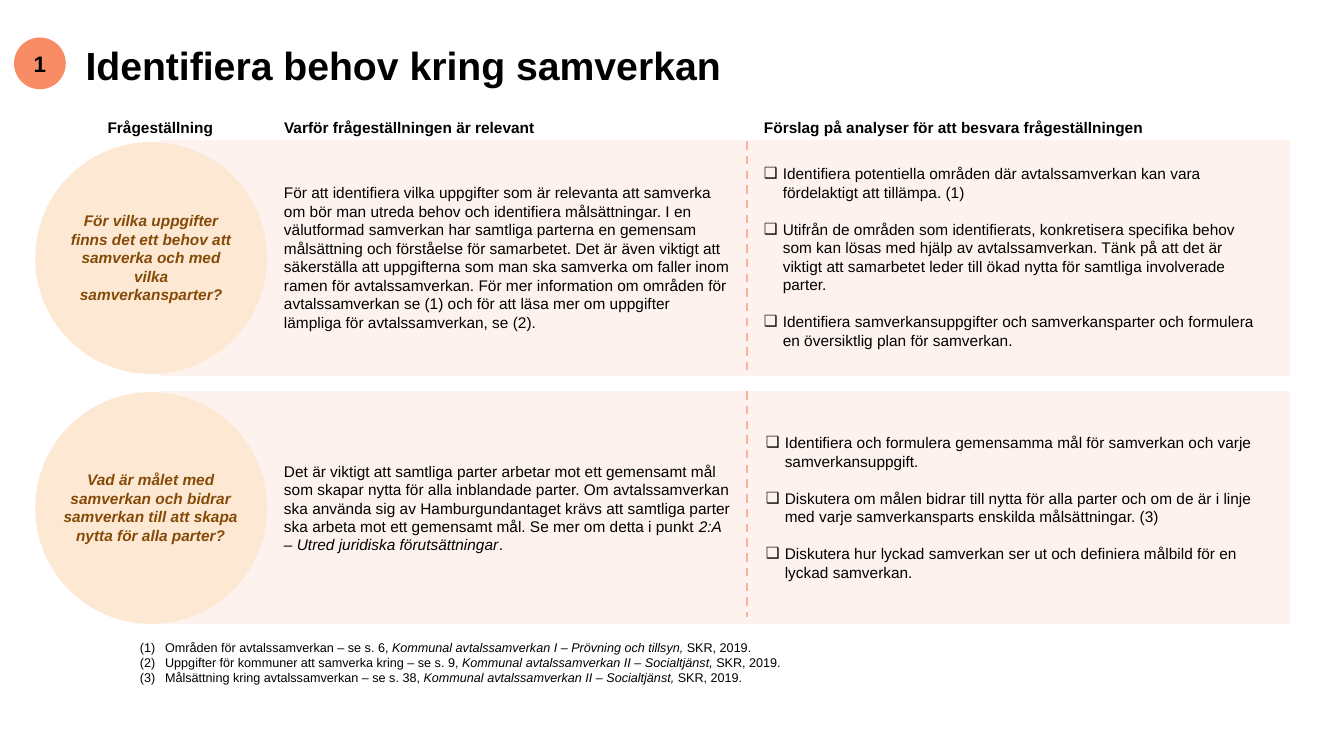
from lxml import etree
from pptx import Presentation
from pptx.dml.color import RGBColor
from pptx.enum.dml import MSO_LINE
from pptx.enum.shapes import MSO_CONNECTOR, MSO_SHAPE
from pptx.enum.text import MSO_ANCHOR, PP_ALIGN
from pptx.oxml.ns import qn
from pptx.util import Pt

LEFT, CENTER = PP_ALIGN.LEFT, PP_ALIGN.CENTER
TOP, MIDDLE = MSO_ANCHOR.TOP, MSO_ANCHOR.MIDDLE
OVAL, RECT = MSO_SHAPE.OVAL, MSO_SHAPE.RECTANGLE
STRAIGHT, DASH = MSO_CONNECTOR.STRAIGHT, MSO_LINE.DASH

CHECKBOX = ("a:buChar", {"char": "❑"})
NUMBERED = ("a:buAutoNum", {"type": "arabicParenBoth"})


def color(value):
    return RGBColor.from_string(value)


class SlideBuilder:
    """Holds the style and the current slide."""

    font_name = "Arial"
    ink, question_ink = "000000", "854A07"
    badge, band, circle, divider = "F88C64", "FDD9CB", "FDE9D3", "FAB398"

    def __init__(self, slide):
        self.slide = slide

    def fill_text(self, frame, paragraphs, size=11, ink=ink, align=LEFT, anchor=TOP,
                  bullet=None, indent=0, gap=0, line_spacing=None, **style):
        """Each paragraph is a string or a list of (text, format) pairs."""
        frame.word_wrap = True
        frame.vertical_anchor = anchor
        for index, content in enumerate(paragraphs):
            paragraph = frame.add_paragraph() if index else frame.paragraphs[0]
            layout = {"alignment": align, "line_spacing": line_spacing,
                      "space_before": Pt(gap if index else 0)}
            for name, value in layout.items():
                setattr(paragraph, name, value)
            if bullet:
                self.add_bullet(paragraph, bullet, indent)
            runs = [(content, {})] if isinstance(content, str) else content
            for text, extra in runs:
                run = paragraph.add_run()
                run.text = text
                run.font.color.rgb = color(ink)
                look = {"name": self.font_name, "size": Pt(size), **style, **extra}
                for name, value in look.items():
                    setattr(run.font, name, value)

    def add_bullet(self, paragraph, bullet, indent):
        tag, attributes = bullet
        properties = paragraph._p.get_or_add_pPr()
        properties.set("marL", str(Pt(indent)))
        properties.set("indent", str(-Pt(indent)))
        etree.SubElement(properties, qn("a:buFont"), typeface=self.font_name)
        etree.SubElement(properties, qn(tag), attributes)

    def text(self, left, top, width, height, paragraphs, **style):
        box = self.slide.shapes.add_textbox(Pt(left), Pt(top), Pt(width), Pt(height))
        self.fill_text(box.text_frame, paragraphs, **style)

    def shape(self, kind, left, top, width, height, fill, opacity=None):
        shape = self.slide.shapes.add_shape(kind, Pt(left), Pt(top), Pt(width), Pt(height))
        shape.shadow.inherit = False
        shape.fill.solid()
        shape.fill.fore_color.rgb = color(fill)
        shape.line.fill.background()
        if opacity is not None:
            tint = shape._element.spPr.find(".//" + qn("a:srgbClr"))
            etree.SubElement(tint, qn("a:alpha"), val=str(opacity * 1000))
        return shape

    def dashed_line(self, x, top, bottom):
        line = self.slide.shapes.add_connector(STRAIGHT, Pt(x), Pt(top), Pt(x), Pt(bottom))
        line.line.color.rgb = color(self.divider)
        line.line.width = Pt(1.5)
        line.line.dash_style = DASH
        etree.SubElement(line._element.spPr, qn("a:effectLst"))


ITALIC = {"italic": True}
REASON_LEFT, ANALYSIS_LEFT, DIVIDER_X = 195.8, 538.6, 533.5

HEADINGS = [
    (69.8, 91, "Frågeställning"),
    (REASON_LEFT, 201, "Varför frågeställningen är relevant"),
    (ANALYSIS_LEFT, 289, "Förslag på analyser för att besvara frågeställningen"),
]

# Text places are (left, top, width, height); band is (top, height), divider (top, bottom)
ROWS = [
    {
        "band": (100.1, 168.5), "circle_top": 101.5, "divider": (100.8, 268.6),
        "question_at": (38.9, 147.6, 138.2, 74.2),
        "question": "För vilka uppgifter finns det ett behov att samverka och med "
                    "vilka samverkansparter?",
        "reason_at": (REASON_LEFT, 127.4, 334.1, 113.8),
        "reason": "För att identifiera vilka uppgifter som är relevanta att samverka om bör man "
                  "utreda behov och identifiera målsättningar. I en välutformad samverkan har "
                  "samtliga parterna en gemensam målsättning och förståelse för samarbetet. Det är "
                  "även viktigt att säkerställa att uppgifterna som man ska samverka om faller "
                  "inom ramen för avtalssamverkan. För mer information om områden för "
                  "avtalssamverkan se (1) och för att läsa mer om uppgifter lämpliga för "
                  "avtalssamverkan, se (2).",
        "analyses_at": (ANALYSIS_LEFT, 113.8, 369.4, 140.4),
        "analyses": [
            "Identifiera potentiella områden där avtalssamverkan kan vara fördelaktigt att "
            "tillämpa. (1)",
            "Utifrån de områden som identifierats, konkretisera specifika behov som kan lösas "
            "med hjälp av avtalssamverkan. Tänk på att det är viktigt att samarbetet leder till "
            "ökad nytta för samtliga involverade parter.",
            "Identifiera samverkansuppgifter och samverkansparter och formulera en översiktlig "
            "plan för samverkan.",
        ],
    },
    {
        "band": (279.4, 166.3), "circle_top": 280.1, "divider": (279.4, 440.6),
        "question_at": (34.6, 332.6, 146.2, 60.5),
        "question": "Vad är målet med samverkan och bidrar samverkan till att skapa nytta "
                    "för alla parter?",
        "reason_at": (REASON_LEFT, 326.2, 334.1, 74.2),
        "reason": [
            ("Det är viktigt att samtliga parter arbetar mot ett gemensamt mål som skapar nytta "
             "för alla inblandade parter. Om avtalssamverkan ska använda sig av "
             "Hamburgundantaget krävs att samtliga parter ska arbeta mot ett gemensamt mål. "
             "Se mer om detta i punkt ", {}),
            ("2:A – Utred juridiska förutsättningar", ITALIC),
            (".", {}),
        ],
        "analyses_at": (540, 306, 365, 113.8),
        "analyses": [
            "Identifiera och formulera gemensamma mål för samverkan och varje "
            "samverkansuppgift.",
            "Diskutera om målen bidrar till nytta för alla parter och om de är i linje med varje "
            "samverkansparts enskilda målsättningar. (3)",
            "Diskutera hur lyckad samverkan ser ut och definiera målbild för en lyckad "
            "samverkan.",
        ],
    },
]

SOURCES = [
    ("Områden för avtalssamverkan – se s. 6, ",
     "Kommunal avtalssamverkan I – Prövning och tillsyn, "),
    ("Uppgifter för kommuner att samverka kring – se s. 9, ",
     "Kommunal avtalssamverkan II – Socialtjänst, "),
    ("Målsättning kring avtalssamverkan – se s. 38, ",
     "Kommunal avtalssamverkan II – Socialtjänst, "),
]


def main():
    deck = Presentation()
    deck.slide_width, deck.slide_height = Pt(960), Pt(540)
    page = SlideBuilder(deck.slides.add_slide(deck.slide_layouts[6]))

    # Step number and title
    step = page.shape(OVAL, 10, 26.8, 37, 37, page.badge)
    page.fill_text(step.text_frame, ["1"], size=16, align=CENTER, anchor=MIDDLE, bold=True)
    page.text(54, 28.8, 756.7, 38.9, ["Identifiera behov kring samverkan"],
              size=28, bold=True, line_spacing=0.95)

    # Column headings
    for left, width, heading in HEADINGS:
        page.text(left, 80.6, width, 20.9, [heading], bold=True)

    # Question rows
    for row in ROWS:
        band_top, band_height = row["band"]
        page.shape(RECT, 113.8, band_top, 807.8, band_height, page.band, opacity=32)
        page.dashed_line(DIVIDER_X, *row["divider"])
        page.shape(OVAL, 25.2, row["circle_top"], 165.6, 165.6, page.circle)
        page.text(*row["question_at"], [row["question"]], ink=page.question_ink,
                  align=CENTER, bold=True, italic=True)
        page.text(*row["reason_at"], [row["reason"]])
        page.text(*row["analyses_at"], row["analyses"], bullet=CHECKBOX, indent=13.5, gap=13.2)

    # Numbered sources
    notes = [[(topic, {}), (title, ITALIC), ("SKR, 2019.", {})] for topic, title in SOURCES]
    page.text(92.9, 453.6, 489.6, 40.3, notes, size=9, bullet=NUMBERED, indent=18)

    deck.save("out.pptx")


if __name__ == "__main__":
    main()
